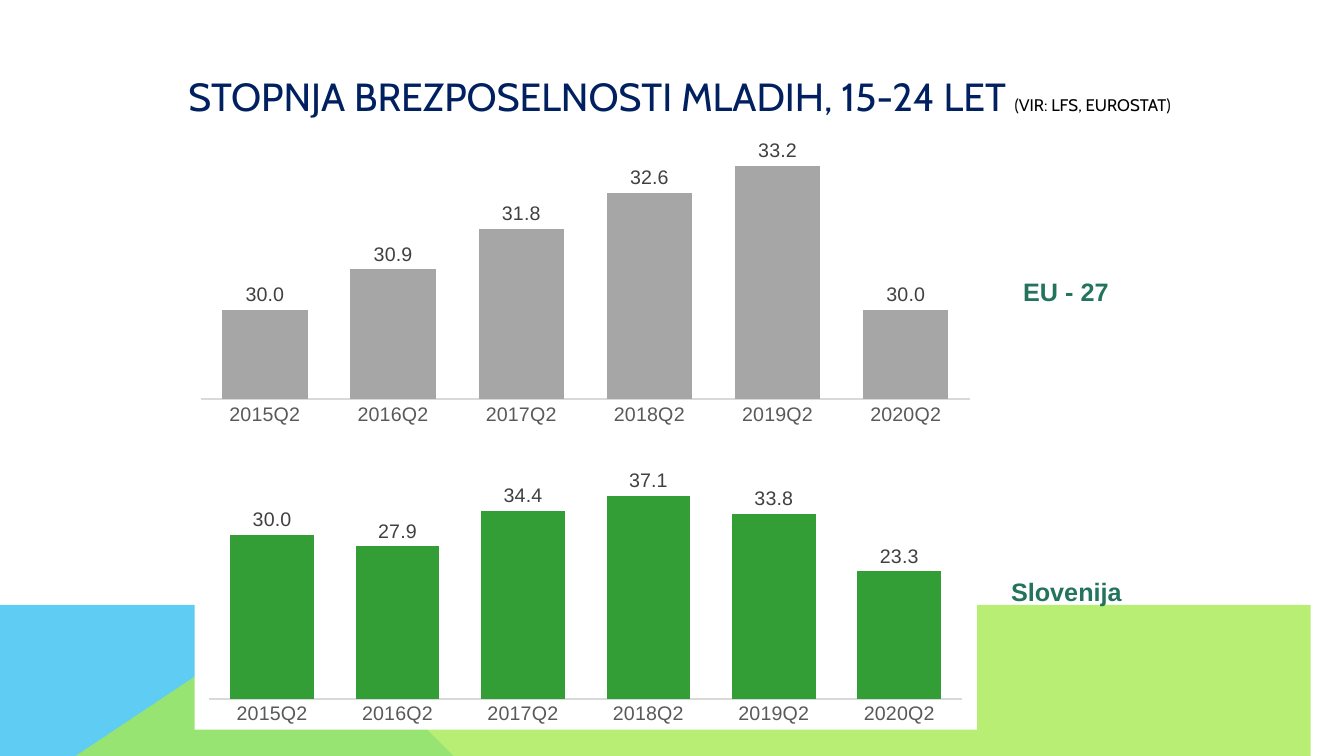
from lxml import etree
from pptx import Presentation
from pptx.chart.data import CategoryChartData
from pptx.dml.color import RGBColor
from pptx.enum.chart import XL_CHART_TYPE, XL_LABEL_POSITION, XL_TICK_LABEL_POSITION, XL_TICK_MARK
from pptx.enum.text import MSO_ANCHOR
from pptx.oxml import parse_xml
from pptx.oxml.ns import nsdecls, qn
from pptx.util import Inches, Pt

COLUMNS = XL_CHART_TYPE.COLUMN_CLUSTERED
OUTSIDE = XL_LABEL_POSITION.OUTSIDE_END
NO_LABELS = XL_TICK_LABEL_POSITION.NONE
NO_TICKS = XL_TICK_MARK.NONE
MIDDLE = MSO_ANCHOR.MIDDLE
TOP = MSO_ANCHOR.TOP

NAVY = RGBColor(0x00, 0x20, 0x60)
BLACK = RGBColor(0x00, 0x00, 0x00)
TEAL = RGBColor(0x23, 0x73, 0x5D)
GREY = RGBColor(0xA6, 0xA6, 0xA6)
GREEN = RGBColor(0x33, 0x9E, 0x35)
SKY = RGBColor(0x5E, 0xCC, 0xF3)
LIME = RGBColor(0xA7, 0xEA, 0x52)
AXIS_TEXT = RGBColor(0x59, 0x59, 0x59)
LABEL_TEXT = RGBColor(0x40, 0x40, 0x40)
AXIS_LINE = RGBColor(0xD9, 0xD9, 0xD9)

WIDTH, HEIGHT = 13.33, 7.5
BAND_TOP = 5.52
CHART_LEFT, CHART_WIDTH = 1.93, 7.76

TITLE = [
    ("STOPNJA BREZPOSELNOSTI MLADIH, 15-24 LET ", 28, NAVY),
    ("(VIR: LFS, EUROSTAT)", 12, BLACK),
]
QUARTERS = [f"{year}Q2" for year in range(2015, 2021)]
PANELS = [
    {"name": "EU - 27", "name_at": (10.05, 2.69, 1.13, 0.4),
     "top": 1.25, "height": 3.02, "color": GREY, "overlap": 68,
     "values": (30.0, 30.9, 31.8, 32.6, 33.2, 30.0), "scale": (28, 34),
     "plot": (0.008, 0.014, 0.983, 0.884)},
    {"name": "Slovenija", "name_at": (9.93, 5.67, 1.37, 0.4),
     "top": 4.66, "height": 2.58, "color": GREEN, "overlap": -27,
     "values": (30.0, 27.9, 34.4, 37.1, 33.8, 23.3), "scale": (0, 40),
     "plot": (0.019, 0.04, 0.962, 0.842)},
]
BANDS = [
    ([(0, HEIGHT), (0, BAND_TOP), (2.98, BAND_TOP), (5.21, HEIGHT)], SKY, 100),
    ([(0, HEIGHT), (2.97, BAND_TOP), (WIDTH, BAND_TOP), (WIDTH, HEIGHT)], LIME, 80),
]


def add_band(page, points, color, opacity):
    builder = page.shapes.build_freeform(*points[0], scale=Inches(1))
    builder.add_line_segments(points[1:], close=True)
    band = builder.convert_to_shape()
    band.shadow.inherit = False
    band.fill.solid()
    band.fill.fore_color.rgb = color
    band.line.fill.background()
    if opacity < 100:
        fill_color = band.fill._xPr.find(".//" + qn("a:srgbClr"))
        etree.SubElement(fill_color, qn("a:alpha")).set("val", str(opacity * 1000))


def add_text(page, place, spans, font_name, bold=False, anchor=TOP):
    box = page.shapes.add_textbox(*map(Inches, place))
    frame = box.text_frame
    frame.word_wrap = True
    frame.vertical_anchor = anchor
    para = frame.paragraphs[0]
    para.font.name = font_name
    para.font.bold = bold
    for text, size, color in spans:
        span = para.add_run()
        span.text = text
        span.font.size = Pt(size)
        span.font.color.rgb = color


def set_font(font, size, color):
    font.name = "Arial"
    font.size = Pt(size)
    font.color.rgb = color


def fix_plot(chart, shares):
    sizes = "".join(f'<c:{tag} val="{share}"/>' for tag, share in zip("xywh", shares))
    layout = parse_xml(
        f'<c:layout {nsdecls("c")}><c:manualLayout><c:layoutTarget val="inner"/>'
        f'<c:xMode val="edge"/><c:yMode val="edge"/>{sizes}</c:manualLayout></c:layout>')
    plot_area = chart._chartSpace.chart.plotArea
    for old in plot_area.findall(qn("c:layout")):
        plot_area.remove(old)
    plot_area.insert(0, layout)


def add_panel(page, panel):
    data = CategoryChartData(number_format="0.0")
    data.categories = QUARTERS
    data.add_series("Series 1", panel["values"])
    place = (CHART_LEFT, panel["top"], CHART_WIDTH, panel["height"])
    chart = page.shapes.add_chart(COLUMNS, *map(Inches, place), data).chart
    chart.has_legend = False
    chart.has_title = False
    set_font(chart.font, 10, BLACK)
    chart._chartSpace.chart.addnext(parse_xml(
        f'<c:spPr {nsdecls("c", "a")}><a:solidFill><a:srgbClr val="FFFFFF"/></a:solidFill>'
        '<a:ln><a:noFill/></a:ln></c:spPr>'))
    fix_plot(chart, panel["plot"])

    quarters, rates = chart.category_axis, chart.value_axis
    for axis, size in ((quarters, 14), (rates, 9)):
        axis.has_major_gridlines = False
        axis.major_tick_mark = axis.minor_tick_mark = NO_TICKS
        set_font(axis.tick_labels.font, size, AXIS_TEXT)
    quarters.format.line.color.rgb = AXIS_LINE
    quarters.format.line.width = Pt(1.5)
    rates.format.line.fill.background()
    rates.tick_label_position = NO_LABELS
    rates.minimum_scale, rates.maximum_scale = panel["scale"]

    plot = chart.plots[0]
    plot.vary_by_categories = False
    plot.gap_width = 50
    plot.overlap = panel["overlap"]
    series = plot.series[0]
    series.format.fill.solid()
    series.format.fill.fore_color.rgb = panel["color"]
    labels = series.data_labels
    labels.show_value = True
    labels.position = OUTSIDE
    labels.number_format = "0.0"
    labels.number_format_is_linked = False
    set_font(labels.font, 14, LABEL_TEXT)


def main():
    deck = Presentation()
    deck.slide_width, deck.slide_height = Inches(WIDTH), Inches(HEIGHT)
    page = deck.slides.add_slide(deck.slide_layouts[6])
    for band in BANDS:
        add_band(page, *band)
    add_text(page, (1.77, 0.65, 9.96, 0.6), TITLE, "Cabin", anchor=MIDDLE)
    for panel in PANELS:
        add_text(page, panel["name_at"], [(panel["name"], 18, TEAL)], "Arial", bold=True)
        add_panel(page, panel)
    deck.save("out.pptx")


if __name__ == "__main__":
    main()
